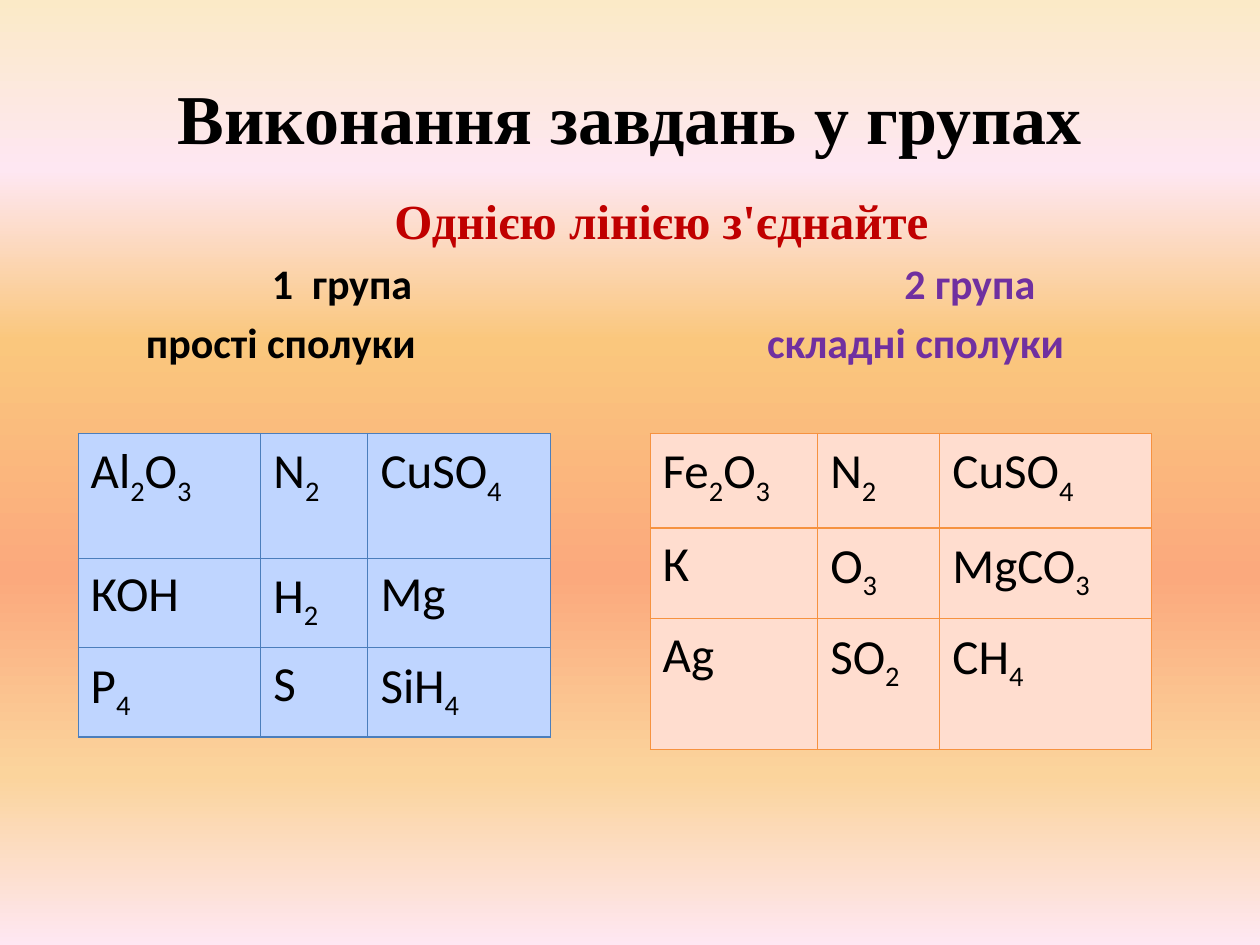
from itertools import groupby

from lxml import etree
from pptx import Presentation
from pptx.dml.color import RGBColor
from pptx.enum.text import MSO_ANCHOR, PP_ALIGN
from pptx.oxml.ns import qn
from pptx.util import Inches, Pt

MID = MSO_ANCHOR.MIDDLE
LEFT, CENTER = PP_ALIGN.LEFT, PP_ALIGN.CENTER
SERIF, SANS = "Times New Roman", "Calibri"
UNIT = Inches(0.1)  # the slide is a grid of 100 columns by 75 rows

HEX = {
    "black": "000000", "red": "C00000", "violet": "7030A0",
    "blue": "BFD5FF", "navy": "4B7EBC",
    "peach": "FFDDCF", "orange": "F69240",
}
SKY = [(0, "FBEAC7"), (18, "FEE7F2"), (36, "FAC77D"),
       (61, "FBA97D"), (82, "FBD49C"), (100, "FEE7F2")]


def grid(*nums):
    return [int(n * UNIT) for n in nums]


def color(name):
    return RGBColor.from_string(HEX[name])


def write(para, text, size=24, font=SANS, ink="black", bold=False,
          align=LEFT, before=0, line=None, sub=False):
    """Add text to a paragraph; sub lowers the digits of a formula."""
    para.alignment = align
    para.space_before = Pt(before)
    if line:
        para.line_spacing = line
    parts = groupby(text, str.isdigit) if sub else [(False, text)]
    for low, chars in parts:
        run = para.add_run()
        run.text = "".join(chars)
        run.font.size, run.font.name, run.font.bold = Pt(size), font, bold
        run.font.color.rgb = color(ink)
        if low:
            run.font._element.set("baseline", "-25000")


def set_tabs(para, stops):
    tabs = etree.SubElement(para._p.get_or_add_pPr(), qn("a:tabLst"))
    for stop in grid(*stops):
        etree.SubElement(tabs, qn("a:tab"), pos=str(stop), algn="l")


def paint_sky(slide):
    slide.background.fill.gradient()
    grad = slide.element.find(".//" + qn("a:gradFill"))
    stops = grad.find(qn("a:gsLst"))
    for old in list(stops):
        stops.remove(old)
    for share, tone in SKY:
        stop = etree.SubElement(stops, qn("a:gs"), pos=str(share * 1000))
        etree.SubElement(stop, qn("a:srgbClr"), val=tone)
    grad.find(qn("a:lin")).set("ang", "5400000")


def add_title(slide, box, text):
    title = slide.shapes.title
    title.left, title.top, title.width, title.height = grid(*box)
    title.text_frame.vertical_anchor = MID
    write(title.text_frame.paragraphs[0], text, size=40, font=SERIF,
          bold=True, align=CENTER)


def add_intro(slide, box, head, lines):
    """Place the task line and, below it, two columns held by tab stops."""
    frame = slide.shapes.add_textbox(*grid(*box)).text_frame
    frame.word_wrap = True
    frame.margin_top = UNIT
    para = frame.paragraphs[0]
    write(para, head, size=28, font=SERIF, ink="red", bold=True, align=CENTER)
    para._p.get_or_add_pPr().set("marL", str(5 * UNIT))
    for stops, words in lines:
        para = frame.add_paragraph()
        for word, ink in zip(words, ("black", "violet")):
            write(para, "\t" + word, ink=ink, bold=True, before=5)
        set_tabs(para, stops)


def add_border(cell, ink):
    props = cell._tc.get_or_add_tcPr()
    for side in ("lnL", "lnR", "lnT", "lnB"):
        line = etree.SubElement(props, qn("a:" + side), w=str(Pt(0.75)))
        fill = etree.SubElement(line, qn("a:solidFill"))
        etree.SubElement(fill, qn("a:srgbClr"), val=HEX[ink])


def add_formulas(slide, spot, cols, rows, data, fill, edge):
    box = grid(*spot, sum(cols), sum(rows))
    table = slide.shapes.add_table(len(rows), len(cols), *box).table
    table.first_row = table.horz_banding = False
    for col, width in zip(table.columns, grid(*cols)):
        col.width = width
    for row, height, words in zip(table.rows, grid(*rows), data):
        row.height = height
        for cell, word in zip(row.cells, words):
            cell.margin_top = Inches(0.07)
            add_border(cell, edge)
            cell.fill.solid()
            cell.fill.fore_color.rgb = color(fill)
            write(cell.text_frame.paragraphs[0], word, size=28,
                  before=7, line=0.94, sub=True)


def main():
    deck = Presentation()
    deck.slide_width, deck.slide_height = grid(100, 75)
    slide = deck.slides.add_slide(deck.slide_layouts[5])
    paint_sky(slide)

    # Headings
    add_title(slide, (5, 3, 90, 12.5), "Виконання завдань у групах")
    add_intro(slide, (0, 14.1, 100, 50.4), "Однією лінією з'єднайте", [
        ((20.6, 70.8), ("1  група", "2 група")),
        ((10.6, 59.9), ("прості сполуки", "складні сполуки")),
    ])

    # Second group, then first group
    add_formulas(slide, (51.6, 34.4), (13.3, 9.7, 16.8), (7.5, 7.2, 10.4), [
        ("Fe2O3", "N2", "CuSO4"),
        ("К", "O3", "MgCO3"),
        ("Ag", "SO2", "CH4"),
    ], "peach", "orange")
    add_formulas(slide, (6.2, 34.4), (14.5, 8.5, 14.5), (9.9, 7.1, 7.1), [
        ("Al2O3", "N2", "CuSO4"),
        ("КОН", "H2", "Mg"),
        ("P4", "S", "SiH4"),
    ], "blue", "navy")

    deck.save("out.pptx")


if __name__ == "__main__":
    main()
